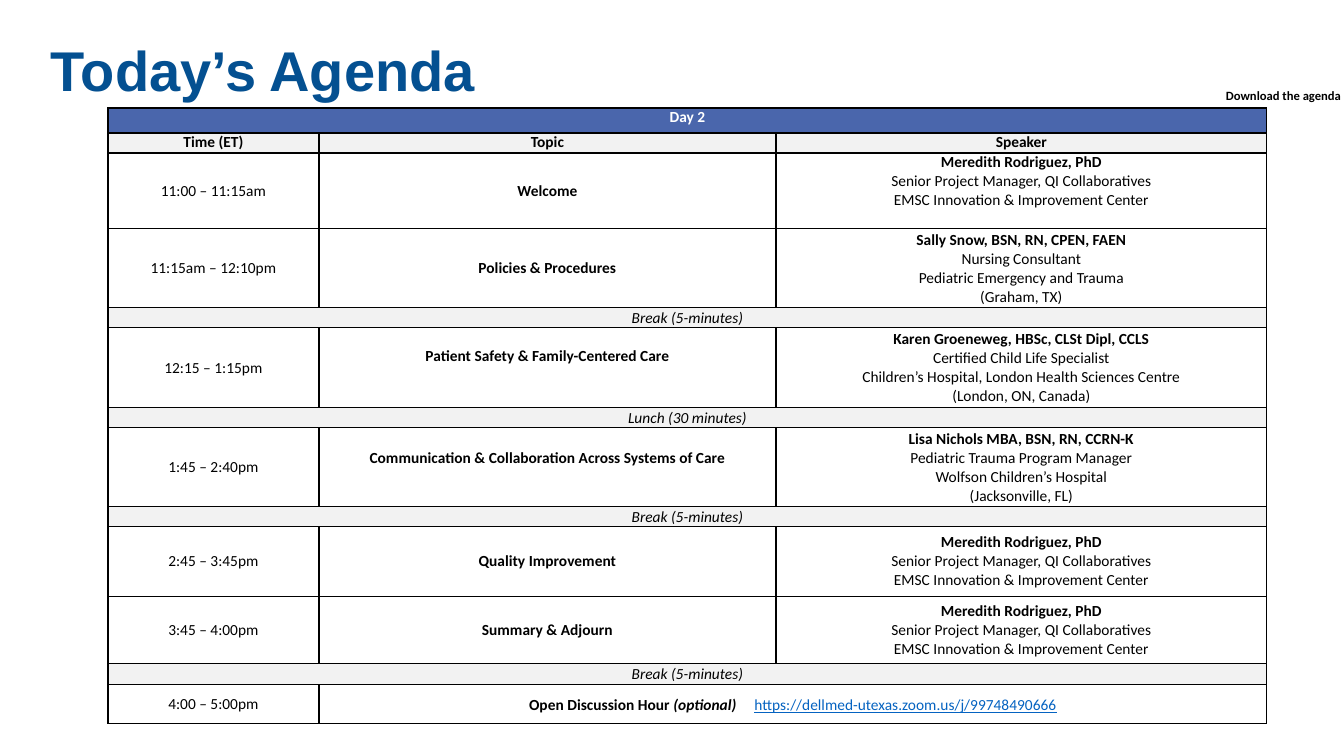
from pptx import Presentation
from pptx.dml.color import RGBColor
from pptx.enum.text import MSO_ANCHOR, PP_ALIGN
from pptx.oxml import parse_xml
from pptx.oxml.ns import nsdecls
from pptx.util import Emu, Pt

COLORS = {"title": "045091", "day": "4A66AC", "band": "F2F2F2",
          "white": "FFFFFF", "black": "000000", "link": "0563C1"}
COLUMNS = [211, 457, 491]
LINE_SPACED = 0.9
BOLD = {"bold": True}
ITALIC = {"italic": True}
MEREDITH = ["Meredith Rodriguez, PhD", "Senior Project Manager, QI Collaboratives",
            "EMSC Innovation & Improvement Center"]
BREAK = "Break (5-minutes)"
DISCUSSION_URL = "https://dellmed-utexas.zoom.us/j/99748490666"

BANDS = [
    (0, 25, "Day 2", "day", "white", BOLD, MSO_ANCHOR.TOP),
    (4, 20, BREAK, "band", "black", ITALIC, MSO_ANCHOR.MIDDLE),
    (6, 20, "Lunch (30 minutes)", "band", "black", ITALIC, MSO_ANCHOR.MIDDLE),
    (8, 20, BREAK, "band", "black", ITALIC, MSO_ANCHOR.MIDDLE),
    (11, 21, BREAK, "band", "black", ITALIC, MSO_ANCHOR.MIDDLE),
]
HEADER = (1, 20, ["Time (ET)", "Topic", "Speaker"])
SESSIONS = [
    (2, 76, "11:00 – 11:15am", "Welcome", 0, MEREDITH, MSO_ANCHOR.TOP),
    (3, 79, "11:15am – 12:10pm", "Policies & Procedures", 0,
     ["Sally Snow, BSN, RN, CPEN, FAEN", "Nursing Consultant",
      "Pediatric Emergency and Trauma", "(Graham, TX)"], MSO_ANCHOR.MIDDLE),
    (5, 80, "12:15 – 1:15pm", "Patient Safety & Family-Centered Care", 24,
     ["Karen Groeneweg, HBSc, CLSt Dipl, CCLS", "Certified Child Life Specialist",
      "Children’s Hospital, London Health Sciences Centre",
      "(London, ON, Canada)"], MSO_ANCHOR.MIDDLE),
    (7, 79, "1:45 – 2:40pm", "Communication & Collaboration Across Systems of Care", 19,
     ["Lisa Nichols MBA, BSN, RN, CCRN-K", "Pediatric Trauma Program Manager",
      "Wolfson Children’s Hospital", "(Jacksonville, FL)"], MSO_ANCHOR.MIDDLE),
    (9, 70, "2:45 – 3:45pm", "Quality Improvement", 0, MEREDITH, MSO_ANCHOR.MIDDLE),
    (10, 67, "3:45 – 4:00pm", "Summary & Adjourn", 0, MEREDITH, MSO_ANCHOR.MIDDLE),
]
DISCUSSION = (12, 39, "4:00 – 5:00pm")
ROW_COUNT = len(BANDS) + len(SESSIONS) + 2


def px(n):
    """Turn pixels into EMU."""
    return Emu(round(n * 914400 / 100.8))


def add_run(p, text, color="black", **formats):
    """Add a formatted run to a paragraph."""
    r = p.add_run()
    r.text = text
    values = {"name": "Calibri", "size": Pt(11), "bold": False, "italic": False}
    for name, value in (values | formats).items():
        setattr(r.font, name, value)
    r.font.color.rgb = RGBColor.from_string(COLORS[color])
    return r


def add_label(slide, box, text, color="black", anchor=MSO_ANCHOR.TOP, **formats):
    """Add a one-paragraph text box and return its paragraph."""
    tf = slide.shapes.add_textbox(*map(px, box)).text_frame
    tf.word_wrap = True
    tf.vertical_anchor = anchor
    p = tf.paragraphs[0]
    add_run(p, text, color, **formats)
    return p


def style_cell(cell, fill):
    """Give a cell black borders, tight margins and a fill."""
    tcPr = cell._tc.get_or_add_tcPr()
    for side in "LRTB":
        tcPr.append(parse_xml(
            f'<a:ln{side} {nsdecls("a")} w="12700"><a:solidFill>'
            f'<a:srgbClr val="{COLORS["black"]}"/></a:solidFill></a:ln{side}>'))
    margins = {"margin_left": 4, "margin_right": 4, "margin_top": 0, "margin_bottom": 0}
    for name, value in margins.items():
        setattr(cell, name, px(value))
    cell.fill.solid()
    cell.fill.fore_color.rgb = RGBColor.from_string(COLORS[fill])


def fill_cell(cell, lines, anchor=MSO_ANCHOR.MIDDLE):
    """Write centred lines, each a list of (text, color, formats) runs."""
    cell.vertical_anchor = anchor
    tf = cell.text_frame
    for i, runs in enumerate(lines):
        p = tf.add_paragraph() if i else tf.paragraphs[0]
        p.alignment = PP_ALIGN.CENTER
        for text, color, formats in runs:
            add_run(p, text, color, **formats)


def add_bands(table):
    """Fill the full-width day and break rows."""
    for row, height, text, fill, color, formats, anchor in BANDS:
        table.rows[row].height = px(height)
        for cell in table.rows[row].cells:
            style_cell(cell, fill)
        table.cell(row, 0).merge(table.cell(row, len(COLUMNS) - 1))
        fill_cell(table.cell(row, 0), [[(text, color, formats)]], anchor)


def add_header(table):
    """Fill the column heading row."""
    row, height, headings = HEADER
    table.rows[row].height = px(height)
    for cell, text in zip(table.rows[row].cells, headings):
        style_cell(cell, "band")
        fill_cell(cell, [[(text, "black", BOLD)]], MSO_ANCHOR.TOP)


def add_sessions(table):
    """Fill the rows with time, topic and speaker."""
    for row, height, time, topic, lift, speaker, anchor in SESSIONS:
        table.rows[row].height = px(height)
        cells = list(table.rows[row].cells)
        for cell in cells:
            style_cell(cell, "white")
        fill_cell(cells[0], [[(time, "black", {})]])
        fill_cell(cells[1], [[(topic, "black", BOLD)]])
        cells[1].margin_bottom = px(lift)
        fill_cell(cells[2], [[(line, "black", {"bold": i == 0})]
                             for i, line in enumerate(speaker)], anchor)


def add_discussion(table):
    """Fill the closing discussion row."""
    row, height, time = DISCUSSION
    table.rows[row].height = px(height)
    for cell in table.rows[row].cells:
        style_cell(cell, "white")
    table.cell(row, 1).merge(table.cell(row, 2))
    fill_cell(table.cell(row, 0), [[(time, "black", {})]])
    topic = table.cell(row, 1)
    fill_cell(topic, [[("Open Discussion Hour ", "black", BOLD),
                       ("(optional)", "black", BOLD | ITALIC),
                       (" ", "black", {"size": Pt(14)}),
                       (DISCUSSION_URL, "link", {"underline": True})]])
    gap = topic.text_frame.paragraphs[0].runs[2]
    gap.font._element.set("spc", "950")


def add_agenda(slide, box):
    """Add the agenda table in the given box."""
    frame = slide.shapes.add_table(ROW_COUNT, len(COLUMNS), *map(px, box))
    table = frame.table
    for column, width in zip(table.columns, COLUMNS):
        column.width = px(width)
    add_bands(table)
    add_header(table)
    add_sessions(table)
    add_discussion(table)


def main():
    """Build the agenda slide and save it."""
    prs = Presentation()
    prs.slide_width, prs.slide_height = px(1344), px(756)
    slide = prs.slides.add_slide(prs.slide_layouts[6])
    title = add_label(slide, (41, 0, 1159, 146), "Today’s Agenda", "title",
                      MSO_ANCHOR.MIDDLE, name="Arial", size=Pt(40), bold=True)
    title.line_spacing = LINE_SPACED
    add_agenda(slide, (108, 108, sum(COLUMNS), 616))
    add_label(slide, (1216, 83, 143, 25), "Download the agenda", size=Pt(9), bold=True)
    prs.save("out.pptx")


if __name__ == "__main__":
    main()
